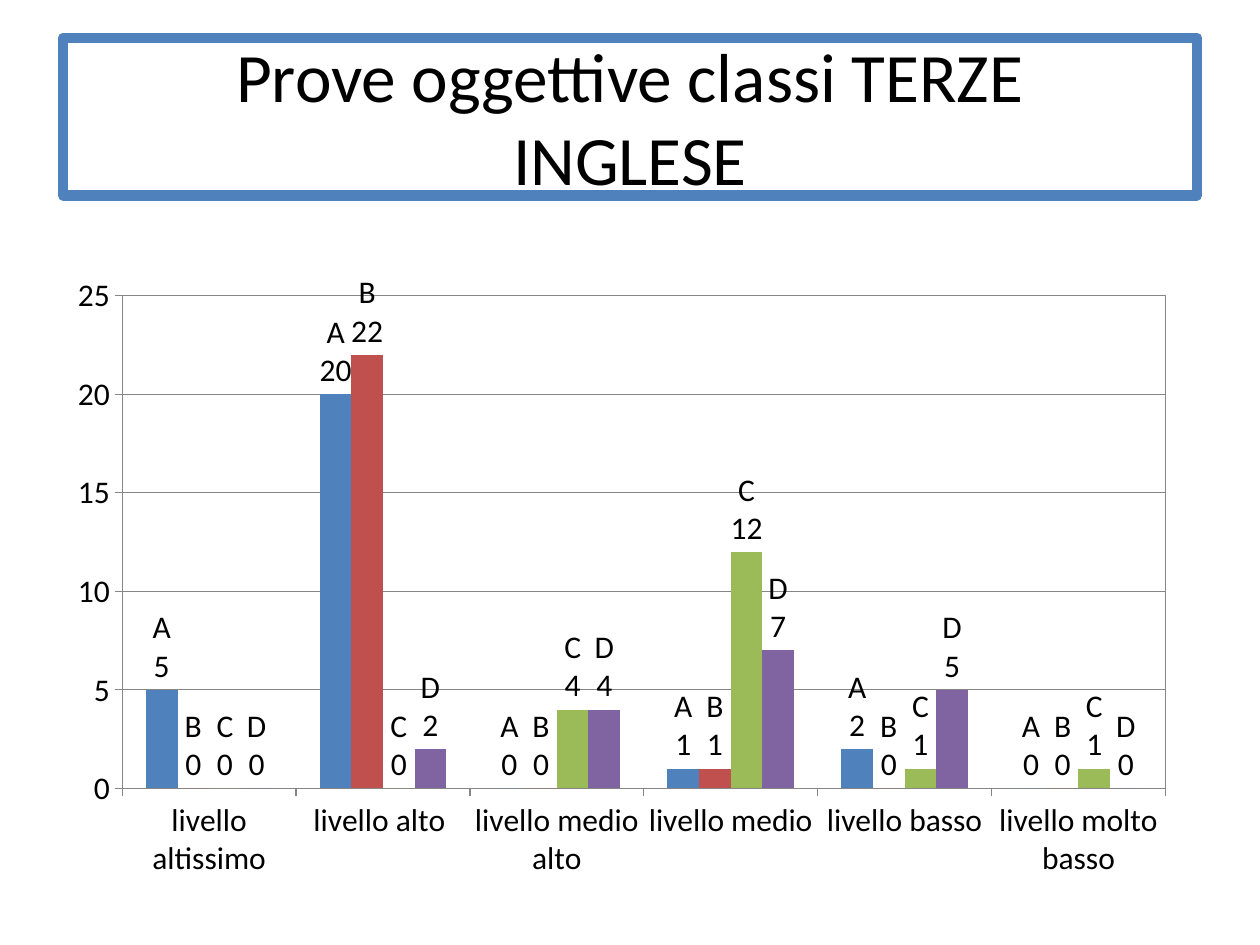
from lxml import etree
from pptx import Presentation
from pptx.chart.data import CategoryChartData
from pptx.dml.color import RGBColor
from pptx.enum.chart import XL_CHART_TYPE, XL_LABEL_POSITION, XL_TICK_MARK
from pptx.enum.text import MSO_ANCHOR, MSO_AUTO_SIZE, PP_ALIGN
from pptx.oxml import parse_xml
from pptx.oxml.ns import nsdecls, qn
from pptx.util import Inches, Pt

COLUMNS = XL_CHART_TYPE.COLUMN_CLUSTERED
OUTSIDE_END = XL_LABEL_POSITION.OUTSIDE_END
TICK_OUT = XL_TICK_MARK.OUTSIDE
TICK_NONE = XL_TICK_MARK.NONE
MIDDLE = MSO_ANCHOR.MIDDLE
NO_AUTOFIT = MSO_AUTO_SIZE.NONE
CENTER = PP_ALIGN.CENTER

HEADING = "Prove oggettive classi TERZE\vINGLESE"
LEVELS = ["livello altissimo", "livello alto ", "livello medio alto",
          "livello medio", "livello basso", "livello molto basso"]
RESULTS = {
    "A": [5, 20, 0, 1, 2, 0],
    "B": [0, 22, 0, 1, 0, 0],
    "C": [0, 0, 4, 12, 1, 1],
    "D": [0, 2, 4, 7, 5, 0],
}
COLORS = {"A": "4F81BD", "B": "C0504D", "C": "9BBB59", "D": "8064A2",
          "border": "4F81BD", "text": "000000", "grid": "868686"}
HEADING_BOX = (0.5, 0.3, 9, 1.25)
CHART_BOX = (0.43, 2.1, 9, 4.95)
PLOT_BOX = {"x": 0.06, "y": 0.05, "w": 0.92, "h": 0.79}


def color(name):
    return RGBColor.from_string(COLORS[name])


def assign(target, values):
    for key, value in values.items():
        setattr(target, key, value)


def style_font(font, size):
    assign(font, {"name": "Calibri", "size": Pt(size), "bold": False})
    font.color.rgb = color("text")


def style_line(line, name, width):
    line.color.rgb = color(name)
    line.width = Pt(width)


def add_heading(slide):
    heading = slide.shapes.title
    assign(heading, dict(zip(("left", "top", "width", "height"), map(Inches, HEADING_BOX))))
    style_line(heading.line, "border", 6)
    frame = heading.text_frame
    frame.text = HEADING
    assign(frame, {"word_wrap": True, "auto_size": NO_AUTOFIT, "vertical_anchor": MIDDLE})
    frame.paragraphs[0].alignment = CENTER
    for run in frame.paragraphs[0].runs:
        style_font(run.font, 39.6)


def label_series(series):
    labels = series.data_labels
    assign(labels, {"show_value": True, "show_series_name": True, "position": OUTSIDE_END})
    style_font(labels.font, 18)
    bubble_flag = series._element.find(".//" + qn("c:showBubbleSize"))
    separator = etree.Element(qn("c:separator"))
    separator.text = "\n"
    bubble_flag.addnext(separator)


def frame_plot(chart):
    plot_area = chart._chartSpace.chart.plotArea
    for layout in plot_area.findall(qn("c:layout")):
        plot_area.remove(layout)
    sizes = "".join(f'<c:{key} val="{value}"/>' for key, value in PLOT_BOX.items())
    plot_area.insert(0, parse_xml(
        f'<c:layout {nsdecls("c")}><c:manualLayout><c:layoutTarget val="inner"/>'
        f'<c:xMode val="edge"/><c:yMode val="edge"/>{sizes}</c:manualLayout></c:layout>'))
    plot_area.append(parse_xml(
        f'<c:spPr {nsdecls("c", "a")}><a:noFill/><a:ln w="9525"><a:solidFill>'
        f'<a:srgbClr val="{COLORS["grid"]}"/></a:solidFill></a:ln></c:spPr>'))


def add_results(slide):
    data = CategoryChartData()
    data.categories = LEVELS
    for group, counts in RESULTS.items():
        data.add_series(group, counts)
    chart = slide.shapes.add_chart(COLUMNS, *map(Inches, CHART_BOX), data).chart
    assign(chart, {"has_legend": False, "has_title": False})
    style_font(chart.font, 18)
    columns = chart.plots[0]
    assign(columns, {"gap_width": 150, "overlap": 0, "vary_by_categories": False})
    for series in columns.series:
        series.format.fill.solid()
        series.format.fill.fore_color.rgb = color(series.name)
        series.invert_if_negative = False
        label_series(series)
    for axis in (chart.category_axis, chart.value_axis):
        assign(axis, {"major_tick_mark": TICK_OUT, "minor_tick_mark": TICK_NONE})
        style_line(axis.format.line, "grid", 0.75)
        style_font(axis.tick_labels.font, 18)
    counts_axis = chart.value_axis
    assign(counts_axis, {"minimum_scale": 0, "maximum_scale": 25, "major_unit": 5,
                         "has_major_gridlines": True})
    style_line(counts_axis.major_gridlines.format.line, "grid", 0.75)
    frame_plot(chart)


def main():
    deck = Presentation()
    assign(deck, {"slide_width": Inches(10), "slide_height": Inches(7.5)})
    slide = deck.slides.add_slide(deck.slide_layouts[5])
    add_heading(slide)
    add_results(slide)
    deck.save("out.pptx")


if __name__ == "__main__":
    main()
